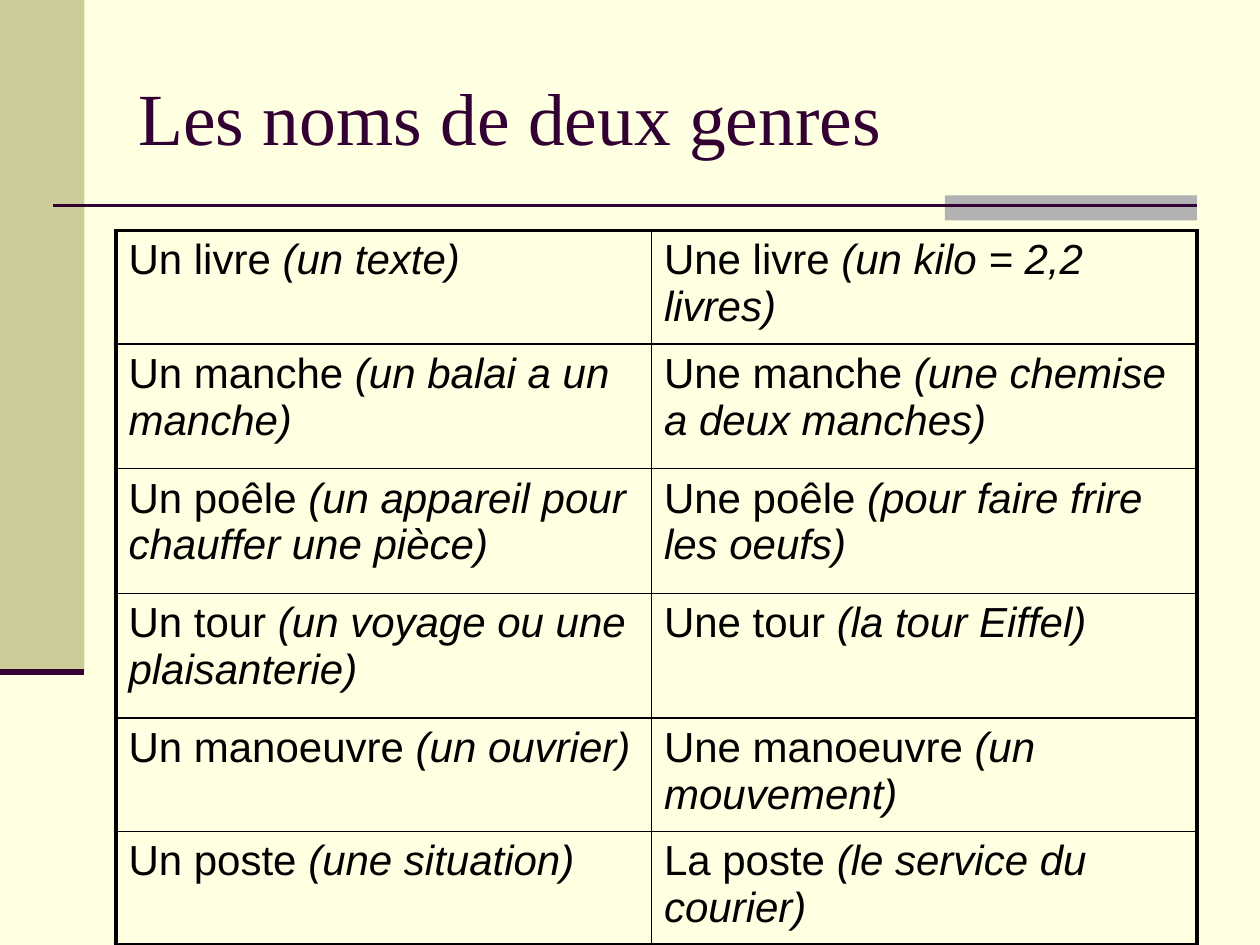
from dataclasses import dataclass

from lxml import etree
from pptx import Presentation
from pptx.dml.color import RGBColor
from pptx.enum.shapes import MSO_CONNECTOR, MSO_SHAPE
from pptx.enum.text import MSO_ANCHOR
from pptx.oxml.ns import qn
from pptx.util import Inches, Pt

RECTANGLE = MSO_SHAPE.RECTANGLE
STRAIGHT = MSO_CONNECTOR.STRAIGHT
MIDDLE = MSO_ANCHOR.MIDDLE


@dataclass(frozen=True)
class Theme:
    """Colours, fonts and sizes of the slide."""
    paper: str = "FFFFE1"
    olive: str = "CCCC99"
    grey: str = "B2B2B2"
    plum: str = "330033"
    ink: str = "000000"
    title_font: str = "Times New Roman"
    body_font: str = "Arial"
    title_size: float = 42
    body_size: float = 24
    outer_border: float = 2.25
    inner_border: float = 1


THEME = Theme()

NOUN_PAIRS = [
    (("Un livre ", "(un texte)"), ("Une livre ", "(un kilo = 2,2 livres)")),
    (("Un manche ", "(un balai a un manche)"),
     ("Une manche ", "(une chemise a deux manches)")),
    (("Un poêle ", "(un appareil pour chauffer une pièce)"),
     ("Une poêle ", "(pour faire frire les oeufs)")),
    (("Un tour ", "(un voyage ou une plaisanterie)"),
     ("Une tour ", "(la tour Eiffel)")),
    (("Un manoeuvre ", "(un ouvrier)"), ("Une manoeuvre ", "(un mouvement)")),
    (("Un poste ", "(une situation)"), ("La poste ", "(le service du courier)")),
]
COLUMN_WIDTHS = [4.25, 4.33]
ROW_HEIGHTS = [0.84, 0.99, 0.99, 0.99, 0.84, 0.84]


def set_font(font, name, size, colour):
    """Apply a typeface, size and colour to a font."""
    font.name = name
    font.size = Pt(size)
    font.color.rgb = RGBColor.from_string(colour)


def add_block(page, left, top, width, height, colour):
    """Add a plain filled rectangle."""
    block = page.shapes.add_shape(
        RECTANGLE, Inches(left), Inches(top), Inches(width), Inches(height))
    block.shadow.inherit = False
    block.fill.solid()
    block.fill.fore_color.rgb = RGBColor.from_string(colour)
    block.line.fill.background()


def add_rule(page, left, top, width, weight):
    """Add a horizontal plum rule."""
    rule = page.shapes.add_connector(
        STRAIGHT, Inches(left), Inches(top), Inches(left + width), Inches(top))
    rule.line.color.rgb = RGBColor.from_string(THEME.plum)
    rule.line.width = Pt(weight)
    etree.SubElement(rule._element.spPr, qn("a:effectLst"))


def add_side_band(page, left, top, width, height):
    """Add the olive band with a rule along its foot."""
    add_block(page, left, top, width, height, THEME.olive)
    add_rule(page, left, top + height, width, 3.5)


def add_divider(page, left, top, width, height):
    """Add the title rule crossing a grey accent at its right end."""
    accent = 2
    add_block(page, left + width - accent, top, accent, height, THEME.grey)
    add_rule(page, left, top + 0.08, width, 1.5)


def add_title(page, left, top, width, height):
    """Add the slide title."""
    box = page.shapes.add_textbox(
        Inches(left), Inches(top), Inches(width), Inches(height))
    frame = box.text_frame
    frame.word_wrap = True
    frame.vertical_anchor = MIDDLE
    para = frame.paragraphs[0]
    para.text = "Les noms de deux genres"
    set_font(para.font, THEME.title_font, THEME.title_size, THEME.plum)


def set_borders(cell, outer_sides):
    """Draw the four cell borders, heavier on the outer sides."""
    properties = cell._tc.get_or_add_tcPr()
    for place, side in enumerate("LRTB"):
        weight = THEME.outer_border if side in outer_sides else THEME.inner_border
        border = etree.Element(qn(f"a:ln{side}"), w=str(Pt(weight)))
        fill = etree.SubElement(border, qn("a:solidFill"))
        etree.SubElement(fill, qn("a:srgbClr"), val=THEME.ink)
        properties.insert(place, border)


def fill_cell(cell, noun, meaning):
    """Write a noun followed by its meaning in italics."""
    cell.fill.background()
    para = cell.text_frame.paragraphs[0]
    for text, italic in ((noun, False), (meaning, True)):
        span = para.add_run()
        span.text = text
        set_font(span.font, THEME.body_font, THEME.body_size, THEME.ink)
        span.font.italic = italic


def add_noun_table(page, left, top, width, height):
    """Add the table of masculine and feminine nouns."""
    last_row, last_column = len(NOUN_PAIRS) - 1, len(COLUMN_WIDTHS) - 1
    table = page.shapes.add_table(
        last_row + 1, last_column + 1,
        Inches(left), Inches(top), Inches(width), Inches(height)).table
    table.first_row = False
    table.horz_banding = False
    for column, share in zip(table.columns, COLUMN_WIDTHS):
        column.width = Inches(width * share / sum(COLUMN_WIDTHS))
    for row, share in zip(table.rows, ROW_HEIGHTS):
        row.height = Inches(height * share / sum(ROW_HEIGHTS))
    for r, pair in enumerate(NOUN_PAIRS):
        for c, (noun, meaning) in enumerate(pair):
            cell = table.cell(r, c)
            fill_cell(cell, noun, meaning)
            edges = {"L": c == 0, "R": c == last_column,
                     "T": r == 0, "B": r == last_row}
            set_borders(cell, [side for side, outer in edges.items() if outer])


def main():
    """Build and save the slide."""
    deck = Presentation()
    deck.slide_width, deck.slide_height = Inches(10), Inches(7.5)
    page = deck.slides.add_slide(deck.slide_layouts[6])
    page.background.fill.solid()
    page.background.fill.fore_color.rgb = RGBColor.from_string(THEME.paper)
    add_side_band(page, 0, 0, 0.67, 5.33)
    add_divider(page, 0.42, 1.55, 9.08, 0.2)
    add_title(page, 1, 0.3, 8.5, 1.25)
    add_noun_table(page, 0.92, 1.83, sum(COLUMN_WIDTHS), sum(ROW_HEIGHTS))
    deck.save("out.pptx")


if __name__ == "__main__":
    main()
